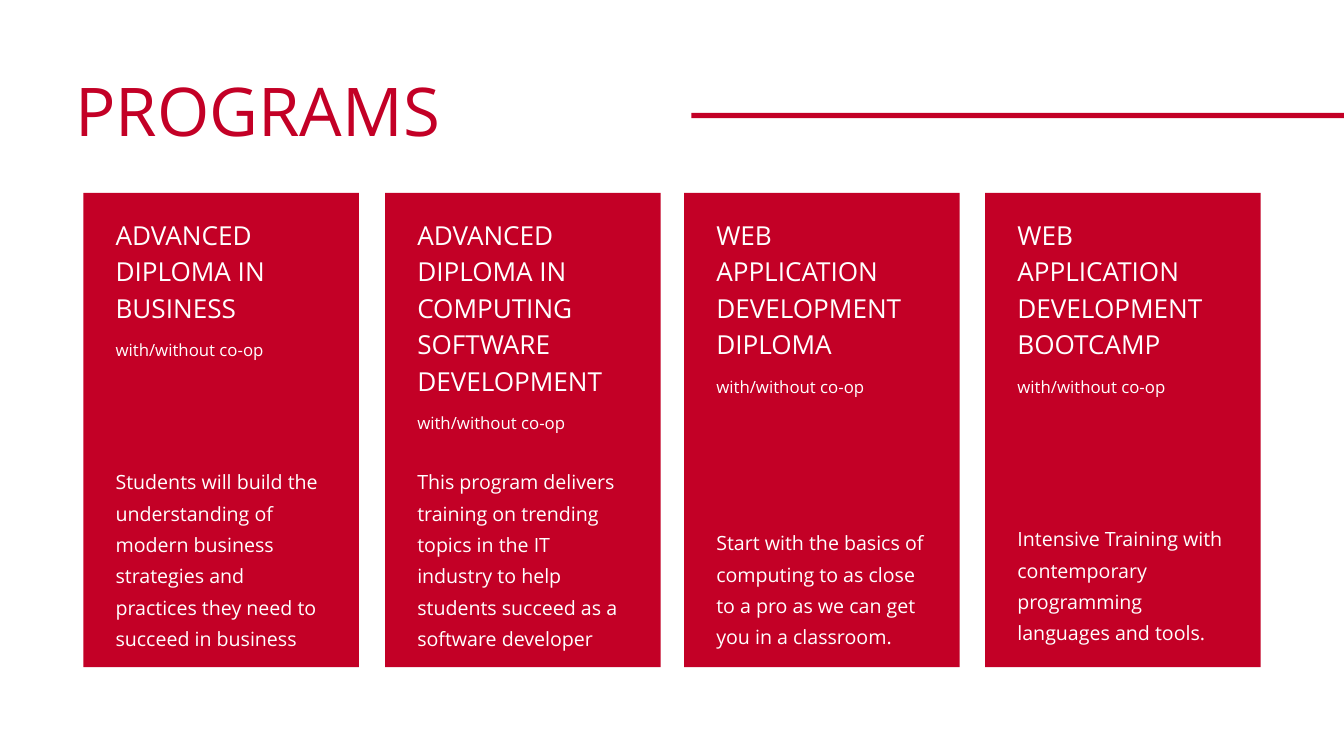
from pptx import Presentation
from pptx.dml.color import RGBColor
from pptx.enum import shapes, text
from pptx.util import Inches, Pt

RED = "C30026"
WHITE = "FFFFFF"
FONT = "Open Sans"
CARD_TOP = 2.87
CARD_WIDTH = 4.1
CARD_HEIGHT = 7.06
TEXT_INSET = 0.48
TEXT_WIDTH = 3.13

PROGRAMS = [
    (1.24, "ADVANCED DIPLOMA IN BUSINESS", 2.12, 6.88, 2.75,
     "Students will build the understanding of modern business strategies "
     "and practices they need to succeed in business"),
    (5.73, "ADVANCED DIPLOMA IN COMPUTING SOFTWARE DEVELOPMENT", 3.22, 6.88, 2.75,
     "This program delivers training on trending topics in the IT industry "
     "to help students succeed as a software developer"),
    (10.18, "WEB APPLICATION DEVELOPMENT DIPLOMA", 2.67, 7.79, 1.81,
     "Start with the basics of computing to as close to a pro as we can "
     "get you in a classroom."),
    (14.66, "WEB APPLICATION DEVELOPMENT BOOTCAMP", 2.67, 7.73, 1.81,
     "Intensive Training with contemporary programming languages and tools."),
]


def color(value):
    """Turn a hex string into a colour."""
    return RGBColor.from_string(value)


def add_panel(page, left, top, width, height):
    """Place a plain red rectangle."""
    panel = page.shapes.add_shape(
        shapes.MSO_SHAPE.RECTANGLE,
        Inches(left), Inches(top), Inches(width), Inches(height))
    panel.shadow.inherit = False
    panel.fill.solid()
    panel.fill.fore_color.rgb = color(RED)
    panel.line.fill.background()


def add_text(page, left, top, width, height, lines, spacing, ink):
    """Place a text box with one paragraph for each (wording, size) pair."""
    box = page.shapes.add_textbox(
        Inches(left), Inches(top), Inches(width), Inches(height))
    frame = box.text_frame
    frame.word_wrap = True
    frame.auto_size = text.MSO_AUTO_SIZE.SHAPE_TO_FIT_TEXT
    frame.margin_left = frame.margin_right = 0
    frame.margin_top = frame.margin_bottom = 0
    for index, (wording, size) in enumerate(lines):
        para = frame.add_paragraph() if index else frame.paragraphs[0]
        para.line_spacing = Pt(spacing)
        span = para.add_run()
        span.text = wording
        span.font.name = FONT
        span.font.size = Pt(size)
        span.font.color.rgb = color(ink)


def add_header(page, left, top, width, height):
    """Place the title and the rule that runs to the right edge."""
    add_text(page, left, top, 8.57, height, [("PROGRAMS", 72)], 72, RED)
    rule_left = 10.29
    add_panel(page, rule_left, top + 0.45, left + width - rule_left, 0.08)


def add_card(page, left, top, width, height, program):
    """Place one program card with its name, option and description."""
    name, name_height, about_top, about_height, about = program
    add_panel(page, left, top, width, height)
    text_left = left + TEXT_INSET
    add_text(page, text_left, top + 0.31, TEXT_WIDTH, name_height,
             [(name, 28), ("with/without co-op", 18)], 39.2, WHITE)
    add_text(page, text_left, about_top, TEXT_WIDTH, about_height,
             [(about, 21)], 33.6, WHITE)


def main():
    """Build the programs slide and save it."""
    deck = Presentation()
    deck.slide_width = Inches(20)
    deck.slide_height = Inches(11.25)
    page = deck.slides.add_slide(deck.slide_layouts[6])
    add_header(page, 1.12, 1.23, 18.88, 1.09)
    for left, *program in PROGRAMS:
        add_card(page, left, CARD_TOP, CARD_WIDTH, CARD_HEIGHT, program)
    deck.save("out.pptx")


if __name__ == "__main__":
    main()
